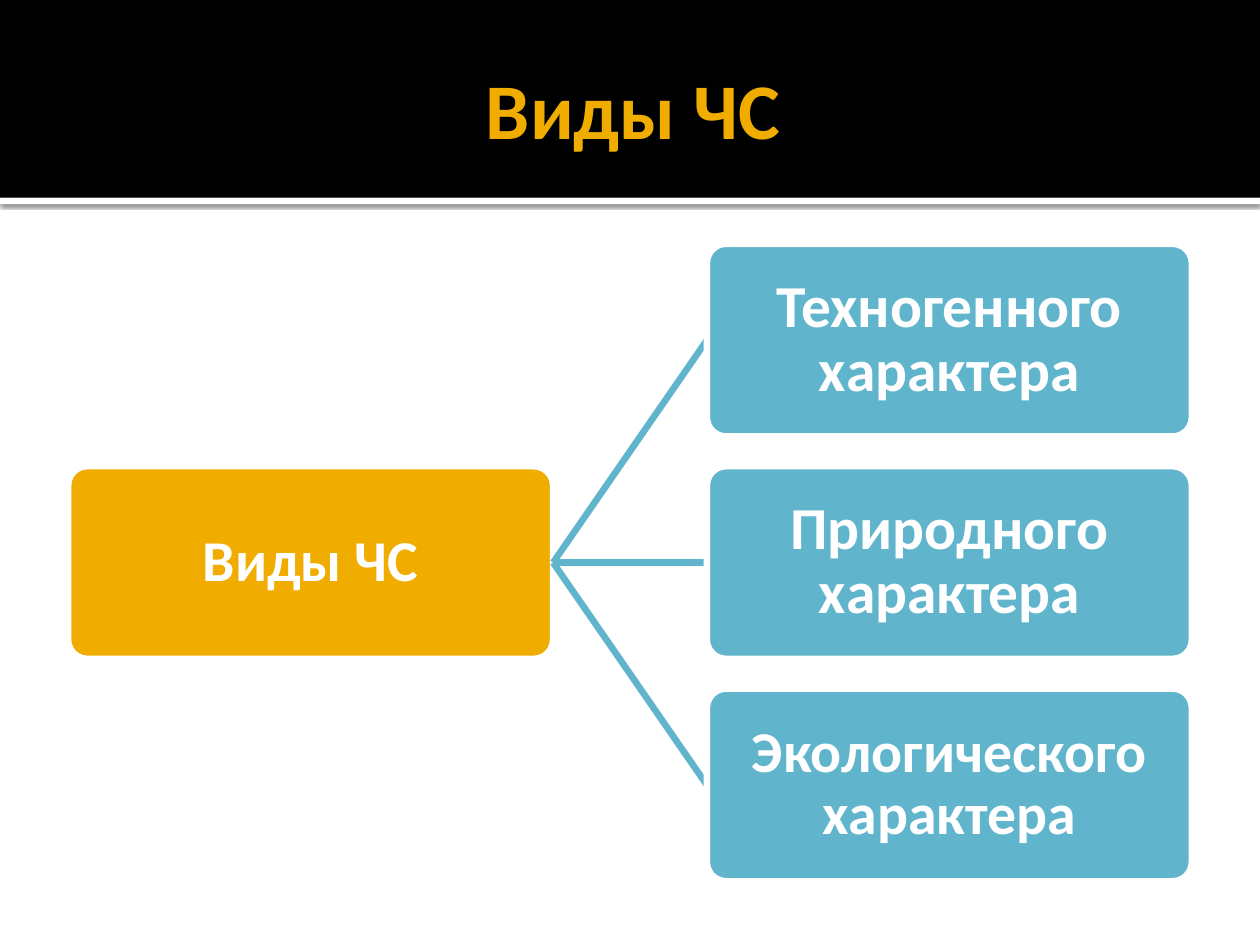
import pptx
import pptx.dml.color
import pptx.enum.shapes
import pptx.enum.text
import pptx.oxml
import pptx.oxml.ns
import pptx.util
from pptx.util import Inches

BLACK = pptx.dml.color.RGBColor(0x00, 0x00, 0x00)
WHITE = pptx.dml.color.RGBColor(0xFF, 0xFF, 0xFF)
AMBER = pptx.dml.color.RGBColor(0xF0, 0xAD, 0x00)
BLUE = pptx.dml.color.RGBColor(0x60, 0xB5, 0xCC)

FONT = "Calibri"
LINE_WIDTH = pptx.util.Pt(3.78)
BOX_WIDTH, BOX_HEIGHT = 3.85, 1.53
ROOT_LEFT, CHILD_LEFT = 0.54, 5.61
MIDDLE_TOP, ROW_STEP = 3.7, 1.765

CHILDREN = [
    ("Техногенного характера", 34),
    ("Природного характера", 34),
    ("Экологического характера", 33),
]


def add_band(slide, top, height, color):
    band = slide.shapes.add_shape(
        pptx.enum.shapes.MSO_SHAPE.RECTANGLE,
        0, Inches(top), Inches(10), Inches(height))
    band.shadow.inherit = False
    band.fill.solid()
    band.fill.fore_color.rgb = color
    band.line.fill.background()
    return band


def add_soft_shadow(shape):
    effects = shape._element.spPr.find(pptx.oxml.ns.qn("a:effectLst"))
    effects.append(pptx.oxml.parse_xml(
        f'<a:outerShdw {pptx.oxml.ns.nsdecls("a")} blurRad="31750" dist="10160" '
        'dir="5400000" algn="tl" rotWithShape="0"><a:srgbClr val="000000">'
        '<a:alpha val="60000"/></a:srgbClr></a:outerShdw>'))


def set_text(shape, text, size, color, margins, line_spacing=1.0):
    frame = shape.text_frame
    frame.word_wrap = True
    frame.vertical_anchor = pptx.enum.text.MSO_ANCHOR.MIDDLE
    (frame.margin_left, frame.margin_top,
     frame.margin_right, frame.margin_bottom) = map(Inches, margins)
    paragraph = frame.paragraphs[0]
    paragraph.alignment = pptx.enum.text.PP_ALIGN.CENTER
    paragraph.line_spacing = line_spacing
    run = paragraph.add_run()
    run.text = text
    run.font.name = FONT
    run.font.size = pptx.util.Pt(size)
    run.font.bold = True
    run.font.color.rgb = color


def add_title(slide, text):
    title = slide.shapes.add_textbox(
        Inches(0.5), Inches(0.17), Inches(9), Inches(1.37))
    set_text(title, text, 45, AMBER, (0.1, 0.05, 0.05, 0.05))


def add_box(slide, left, top, text, size, color):
    box = slide.shapes.add_shape(
        pptx.enum.shapes.MSO_SHAPE.ROUNDED_RECTANGLE,
        Inches(left), Inches(top), Inches(BOX_WIDTH), Inches(BOX_HEIGHT))
    box.adjustments[0] = 0.1
    box.shadow.inherit = False
    box.fill.solid()
    box.fill.fore_color.rgb = color
    box.line.color.rgb = WHITE
    box.line.width = LINE_WIDTH
    set_text(box, text, size, WHITE, (0.02,) * 4, line_spacing=0.9)
    return box


def add_branch(slide, root, top, text, size):
    # The connector lies beneath the child box, so it is added first
    connector = slide.shapes.add_connector(
        pptx.enum.shapes.MSO_CONNECTOR.STRAIGHT,
        root.left + root.width, root.top + root.height // 2,
        Inches(CHILD_LEFT), Inches(top + BOX_HEIGHT / 2))
    connector.line.color.rgb = BLUE
    connector.line.width = LINE_WIDTH
    connector._element.spPr.append(pptx.oxml.parse_xml(
        f'<a:effectLst {pptx.oxml.ns.nsdecls("a")}/>'))
    child = add_box(slide, CHILD_LEFT, top, text, size, BLUE)
    connector.begin_connect(root, 3)
    connector.end_connect(child, 1)


def main():
    presentation = pptx.Presentation()
    presentation.slide_width = Inches(10)
    presentation.slide_height = Inches(7.5)
    slide = presentation.slides.add_slide(presentation.slide_layouts[6])

    # Header
    add_soft_shadow(add_band(slide, 1.57, 0.05, WHITE))
    add_band(slide, 0, 1.57, BLACK)
    add_title(slide, "Виды ЧС")

    # Hierarchy: one root and three branches
    root = add_box(slide, ROOT_LEFT, MIDDLE_TOP, "Виды ЧС", 33, AMBER)
    for row, (text, size) in enumerate(CHILDREN):
        add_branch(slide, root, MIDDLE_TOP + (row - 1) * ROW_STEP, text, size)

    presentation.save("out.pptx")


if __name__ == "__main__":
    main()
